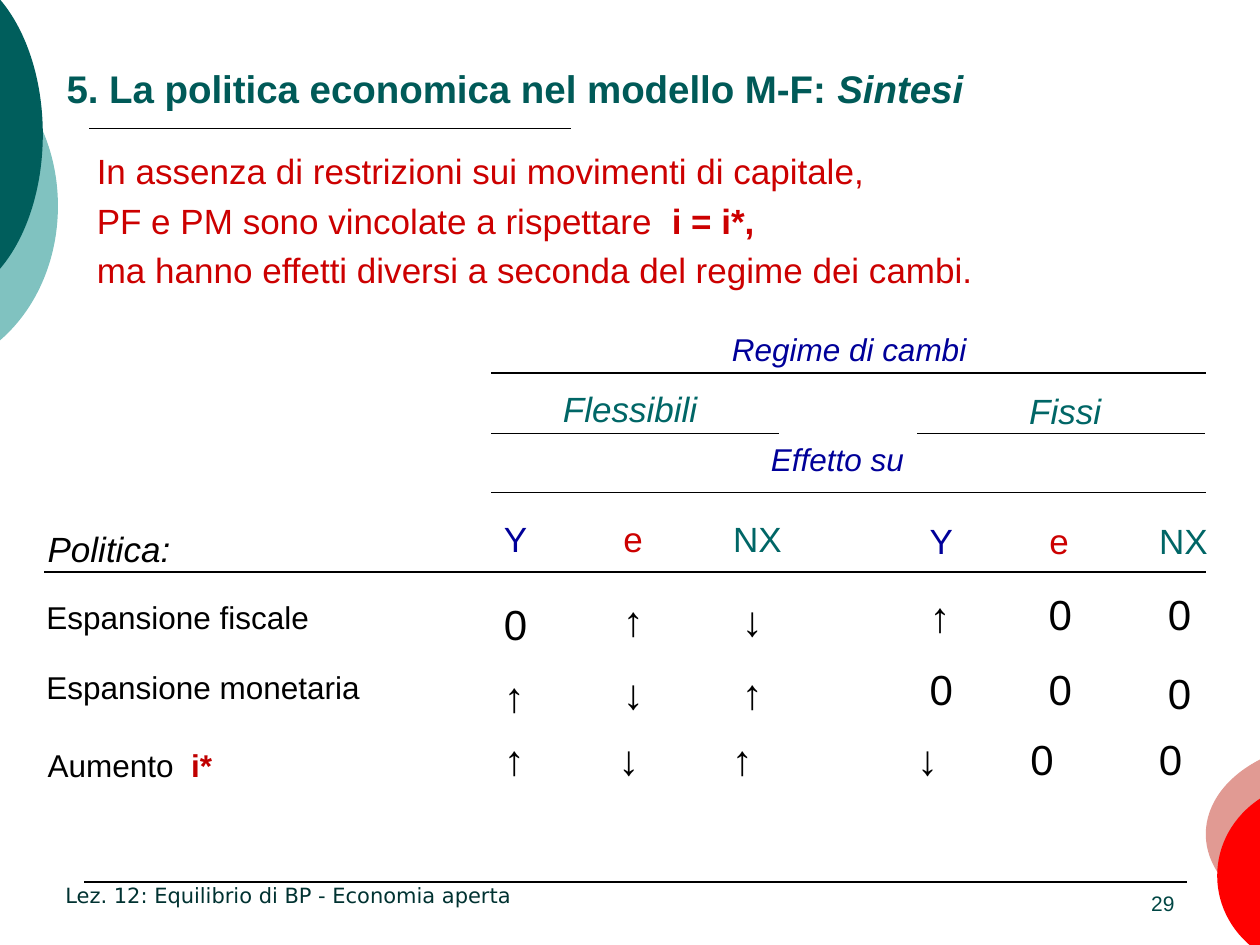
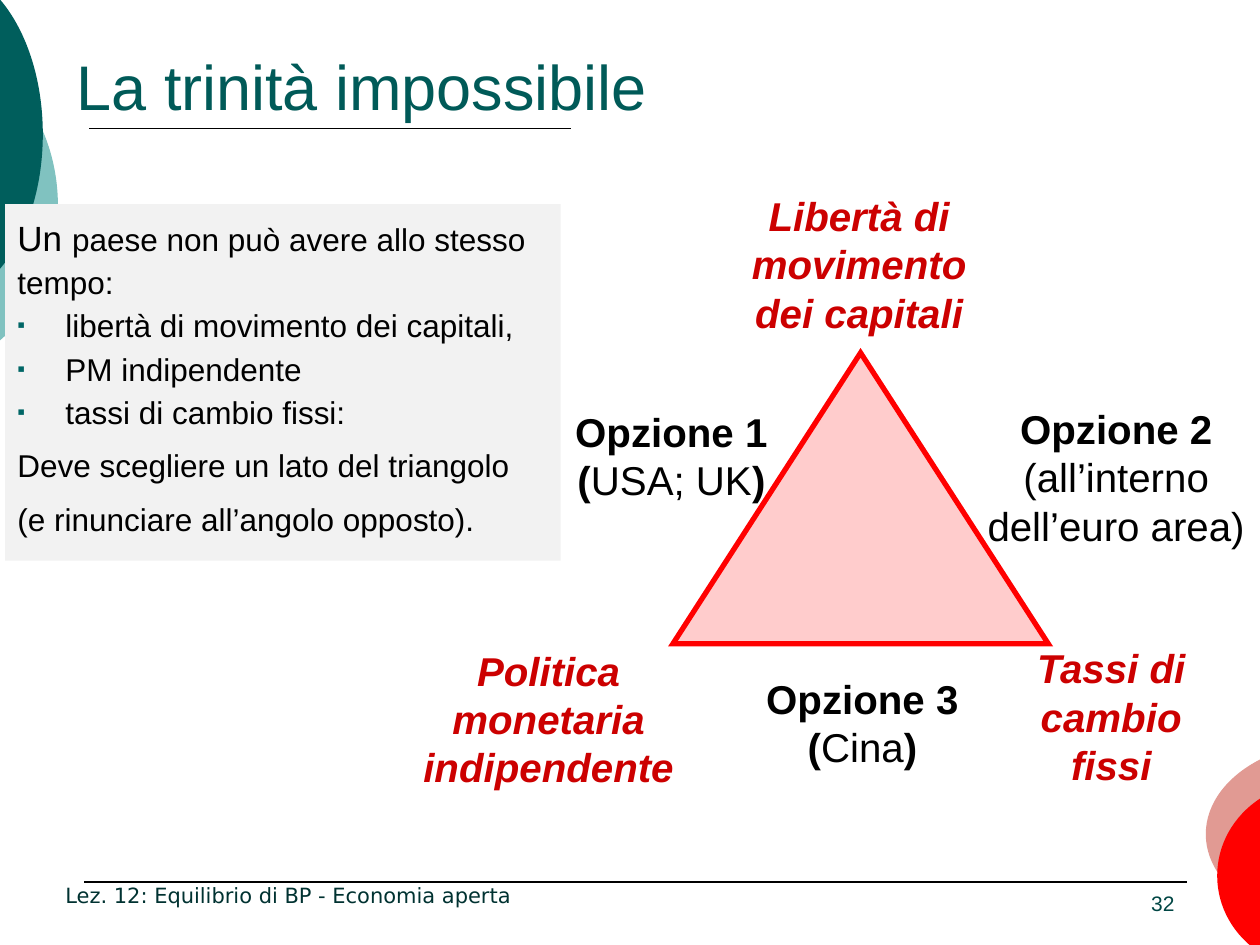
import pptx
import pptx.dml.color
import pptx.enum.shapes
import pptx.enum.text
import pptx.oxml.ns
import pptx.util
from lxml import etree

SCALE = 9144
TEAL, DARK_TEAL, PALE_TEAL = "006666", "005A58", "80C2C0"
RED, BLUE, BLACK = "CC0000", "000099", "000000"
ALIGN = pptx.enum.text.PP_ALIGN
ANCHOR = pptx.enum.text.MSO_ANCHOR
SHAPE = pptx.enum.shapes.MSO_SHAPE
qn = pptx.oxml.ns.qn


def px(n):
    return pptx.util.Emu(round(n * SCALE))


def rgb(value):
    return pptx.dml.color.RGBColor.from_string(value)


def sub(parent, tag, **attrs):
    return etree.SubElement(parent, qn(tag), **attrs)


class Deck:
    font = "Arial"
    footer = "Lez. 12: Equilibrio di BP - Economia aperta"
    cap_curve = (("a:moveTo", [(775, 90)]),
                 ("a:cubicBezTo", [(917, 184), (1000, 336), (1000, 500)]),
                 ("a:cubicBezTo", [(1000, 664), (917, 816), (775, 910)]),
                 ("a:close", []))

    def __init__(self):
        self.prs = pptx.Presentation()
        self.prs.slide_width, self.prs.slide_height = px(1000), px(750)
        self.s = None

    def slide(self, number):
        self.s = self.prs.slides.add_slide(self.prs.slide_layouts[6])
        self.cap(-169, 31, 215, 265, PALE_TEAL)
        self.cap(-127, -27, 161, 267, "005E5C")
        self.line(71, 453, 102, 1)
        self.line(67, 942, 700)
        self.cap(957, 588, 204, 148, "E19A93", 180)
        self.cap(966, 620, 153, 150, "FF0000", 180)
        self.text(815, 682, 127, 50, number, size=12, color="004644",
                  align=ALIGN.RIGHT, anchor=ANCHOR.BOTTOM)

    def sign(self):
        self.text(42, 700, 425, 25, self.footer, size=12, color="003231",
                  font="DejaVu Sans", anchor=ANCHOR.BOTTOM)

    def cap(self, x, y, w, h, fill, rotation=0):
        builder = self.s.shapes.build_freeform(px(x), px(y))
        builder.add_line_segments([(px(x + w), px(y)), (px(x + w), px(y + h))])
        sp = builder.convert_to_shape()
        sp.rotation = rotation
        paths = sp._element.spPr.find(qn("a:custGeom")).find(qn("a:pathLst"))
        paths.remove(paths[0])
        outline = sub(paths, "a:path", w="1000", h="1000")
        for tag, points in self.cap_curve:
            step = sub(outline, tag)
            for a, b in points:
                sub(step, "a:pt", x=str(a), y=str(b))
        self.paint(sp, fill)

    def paint(self, sp, fill, line=None, width=0):
        sp.shadow.inherit = False
        sp.fill.solid()
        sp.fill.fore_color.rgb = rgb(fill)
        if line is None:
            sp.line.fill.background()
            return
        sp.line.color.rgb = rgb(line)
        sp.line.width = pptx.util.Pt(width)
        sub(sp._element.spPr.find(qn("a:ln")), "a:miter", lim="800000")

    def line(self, x1, x2, y, width=0.75):
        cx = self.s.shapes.add_connector(
            pptx.enum.shapes.MSO_CONNECTOR.STRAIGHT, px(x1), px(y), px(x2), px(y))
        cx.line.color.rgb = rgb(BLACK)
        cx.line.width = pptx.util.Pt(width)
        sub(cx._element.spPr, "a:effectLst")

    def shape(self, kind, x, y, w, h, fill, line=None, width=0):
        sp = self.s.shapes.add_shape(kind, px(x), px(y), px(w), px(h))
        self.paint(sp, fill, line, width)
        return sp

    def frame(self, x, y, w, h, anchor=ANCHOR.TOP):
        tf = self.s.shapes.add_textbox(px(x), px(y), px(w), px(h)).text_frame
        tf.word_wrap = True
        tf.vertical_anchor = anchor
        return tf

    def para(self, tf, runs, size=18, color=BLACK, bold=False, italic=False,
             font=None, align=ALIGN.LEFT, spacing=None, before=0,
             bullet=None, tabs=()):
        p = tf.paragraphs[0]
        if p.runs:
            p = tf.add_paragraph()
        p.alignment = align
        p.space_before = pptx.util.Pt(before)
        if spacing:
            p.line_spacing = spacing
        pPr = p._p.get_or_add_pPr()
        if bullet:
            pPr.set("marL", str(px(38)))
            pPr.set("indent", str(px(-38)))
            sub(sub(pPr, "a:buClr"), "a:srgbClr", val=TEAL)
            sub(pPr, "a:buSzPct", val="70000")
            sub(pPr, "a:buFont", typeface=self.font)
            sub(pPr, "a:buChar", char=bullet)
        if tabs:
            stops = sub(pPr, "a:tabLst")
            for tab in tabs:
                sub(stops, "a:tab", pos=str(px(tab)), algn="l")
        base = dict(size=size, color=color, bold=bold, italic=italic)
        for run in [runs] if isinstance(runs, str) else runs:
            if run == "\n":
                p.add_line_break()
                continue
            words, changes = (run, {}) if isinstance(run, str) else run
            look = {**base, **changes}
            r = p.add_run()
            r.text = words
            r.font.name = font or self.font
            r.font.size = pptx.util.Pt(look["size"])
            r.font.bold = look["bold"]
            r.font.italic = look["italic"]
            r.font.color.rgb = rgb(look["color"])

    def text(self, x, y, w, h, runs, anchor=ANCHOR.TOP, **style):
        self.para(self.frame(x, y, w, h, anchor), runs, **style)

    def title(self, x, bottom, runs, **style):
        self.text(x, 5, 800, bottom - 5, runs, color=DARK_TEAL,
                  anchor=ANCHOR.BOTTOM, **style)


def policy_summary(deck):
    deck.slide("29")
    deck.sign()
    deck.title(43, 93, ["5. La politica economica nel modello M-F: ",
                        ("Sintesi", {"italic": True})], size=22, bold=True)
    intro = deck.frame(67, 107, 827, 134, ANCHOR.MIDDLE)
    for runs in (
            "In assenza di restrizioni sui movimenti di capitale,",
            ["PF e PM sono vincolate a rispettare  ", ("i = i*,", {"bold": True})],
            "ma hanno effetti diversi a seconda del regime dei cambi."):
        deck.para(intro, runs, size=20, color=RED, spacing=1.05, before=3)

    for x1, x2, y in ((35, 957, 454), (390, 957, 391), (390, 618, 344),
                      (728, 956, 344), (390, 957, 296)):
        deck.line(x1, x2, y)
    for x, y, w, h, label, size, color in (
            (571, 257, 220, 40, "Regime di cambi", 18, BLUE),
            (437, 303, 173, 43, "Flessibili", 20, TEAL),
            (807, 304, 134, 43, "Fissi", 20, TEAL),
            (602, 344, 165, 40, "Effetto su", 18, BLUE),
            (28, 414, 157, 43, "Politica:", 20, BLACK)):
        deck.text(x, y, w, h, label, size=size, color=color, italic=True)

    for x, y, w, policy in (
            (27, 470, 276, "Espansione fiscale"),
            (27, 525, 307, "Espansione monetaria"),
            (28, 587, 307, ["Aumento  ",
                            ("i*", {"color": "C00000", "bold": True})])):
        deck.text(x, y, w, 40, policy)

    regimes = (
        (390, 406, (("0↑↓", (470, 467, 467)), ("↑↓↑", (527, 525, 525)))),
        (728, 407, (("↑00", (464, 462, 462)), ("000", (522, 522, 525)))))
    for left, header_top, effects in regimes:
        for x, w, name, color in ((0, 47, "Y", BLUE), (95, 47, "e", RED),
                                  (182, 71, "NX", TEAL)):
            deck.text(left + x, header_top, w, 43, name, size=20, color=color)
        for symbols, tops in effects:
            for col, (symbol, top) in enumerate(zip(symbols, tops)):
                deck.text(left + 94.5 * col, top, 71 if col == 2 else 47,
                          50, symbol, size=24, bold=symbol != "0")
    deck.text(390, 577, 583, 50,
              ["↑\t↓\t↑\t↓\t", ("0\t0", {"bold": False})],
              size=24, bold=True, tabs=(91, 181, 328, 418, 520))


def impossible_trinity(deck):
    deck.slide("32")
    deck.title(51, 103, "La trinità impossibile", size=36)
    sp = deck.shape(SHAPE.RECTANGLE, 4, 162, 441, 283, "F2F2F2")
    tf = sp.text_frame
    tf.word_wrap = True
    tf.vertical_anchor = ANCHOR.TOP
    deck.para(tf, [("Un ", {"size": 20}),
                   "paese non può avere allo stesso tempo:"], spacing=1.14)
    for goal in ("libertà di movimento dei capitali,", "PM indipendente",
                 "tassi di cambio fissi:"):
        deck.para(tf, goal, spacing=1.14, bullet="▪")
    for advice in ("Deve scegliere un lato del triangolo",
                   "(e rinunciare all’angolo opposto)."):
        deck.para(tf, advice, spacing=1.14, before=6)

    deck.shape(SHAPE.ISOSCELES_TRIANGLE, 534, 280, 298, 231, "FFCCCC", "FF0000", 3)
    for x, y, w, corner in (
            (569, 147, 226, "Libertà di movimento dei capitali"),
            (319, 508, 233, "Politica monetaria indipendente"),
            (796, 506, 172, "Tassi di cambio fissi")):
        deck.text(x, y, w, 126, corner, size=23, color=RED, bold=True,
                  italic=True, align=ALIGN.CENTER)
    plain = {"bold": False}
    for x, y, w, h, runs in (
            (445, 318, 176, 88, ["Opzione 1", "\n", "(", ("USA; UK", plain), ")"]),
            (594, 530, 181, 88, ["Opzione 3", "\n", "(", ("Cina", plain), ")"]),
            (772, 316, 228, 126, ["Opzione 2", "\n",
                                  ("(all’interno dell’euro area)", plain)])):
        deck.text(x, y, w, h, runs, size=23, bold=True, align=ALIGN.CENTER)
    deck.sign()


def main():
    deck = Deck()
    policy_summary(deck)
    impossible_trinity(deck)
    deck.prs.save("out.pptx")


if __name__ == "__main__":
    main()
